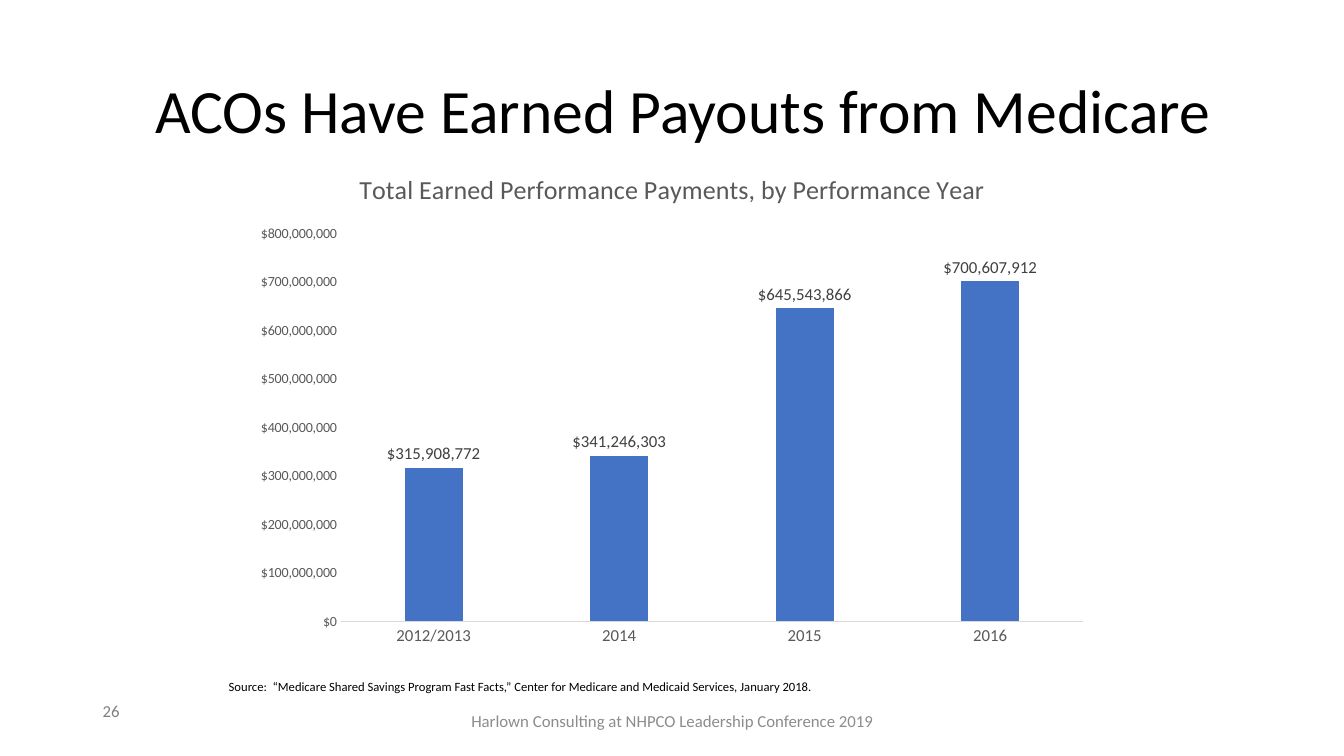
from lxml import etree
from pptx import Presentation
from pptx.chart.data import CategoryChartData
from pptx.dml.color import RGBColor
from pptx.enum.chart import XL_CHART_TYPE, XL_LABEL_POSITION, XL_TICK_MARK
from pptx.enum.text import MSO_ANCHOR, PP_ALIGN
from pptx.oxml import parse_xml
from pptx.oxml.ns import nsdecls
from pptx.util import Inches, Pt

COLORS = {
    "black": "000000", "axis": "595959", "label": "404040", "line": "D9D9D9",
    "bar": "4472C4", "footer": "8C8C8C", "number": "808080",
}
DOLLARS = '"$"#,##0'


def style(font, size, color):
    font.name = "Calibri"
    font.size = Pt(size)
    font.bold = False
    font.color.rgb = RGBColor.from_string(COLORS[color])


def write(sp, text, size, color, align, anchor):
    tf = sp.text_frame
    tf.word_wrap = True
    tf.vertical_anchor = anchor
    p = tf.paragraphs[0]
    p.alignment = align
    r = p.add_run()
    r.text = text
    style(r.font, size, color)
    return p


prs = Presentation()
prs.slide_width, prs.slide_height = Inches(13.33), Inches(7.5)
s = prs.slides.add_slide(prs.slide_layouts[5])

# Title
title = s.shapes.title
title.left, title.top = Inches(1.44), Inches(0.4)
title.width, title.height = Inches(10.98), Inches(1.45)
p = write(title, "ACOs Have Earned Payouts from Medicare", 44, "black",
          PP_ALIGN.LEFT, MSO_ANCHOR.MIDDLE)
p.line_spacing = 0.9

# Payments chart
data = CategoryChartData(number_format=DOLLARS)
data.categories = ["2012/2013", "2014", "2015", "2016"]
data.add_series("Series 1", [315908772, 341246303, 645543866, 700607912])
chart = s.shapes.add_chart(XL_CHART_TYPE.COLUMN_CLUSTERED, Inches(2.42), Inches(1.5),
                           Inches(8.5), Inches(5), data).chart
style(chart.font, 10, "black")
chart.has_legend = False
chart.has_title = True
r = chart.chart_title.text_frame.paragraphs[0].add_run()
r.text = "Total Earned Performance Payments, by Performance Year"
style(r.font, 18.6, "axis")
chart.chart_title.include_in_layout = False

# Columns and value labels
plot = chart.plots[0]
plot.gap_width, plot.overlap = 219, -27
plot.vary_by_categories = False
series = plot.series[0]
series.format.fill.solid()
series.format.fill.fore_color.rgb = RGBColor.from_string(COLORS["bar"])
labels = series.data_labels
labels.show_value = True
labels.number_format, labels.number_format_is_linked = DOLLARS, False
labels.position = XL_LABEL_POSITION.OUTSIDE_END
style(labels.font, 12, "label")

# Axes
cat_axis, val_axis = chart.category_axis, chart.value_axis
for axis, size in ((cat_axis, 12), (val_axis, 10)):
    axis.has_major_gridlines = False
    axis.major_tick_mark = axis.minor_tick_mark = XL_TICK_MARK.NONE
    style(axis.tick_labels.font, size, "axis")
cat_axis.format.line.color.rgb = RGBColor.from_string(COLORS["line"])
cat_axis.format.line.width = Pt(0.75)
val_axis.format.line.fill.background()
val_axis.minimum_scale, val_axis.maximum_scale = 0, 800000000
val_axis.major_unit = 100000000
val_axis.tick_labels.number_format = DOLLARS
val_axis.tick_labels.number_format_is_linked = False

# Fixed inner plot area
plot_area = chart.element.chart.plotArea
for old in plot_area.findall("{*}layout"):
    plot_area.remove(old)
layout = parse_xml(f"<c:layout {nsdecls('c')}><c:manualLayout/></c:layout>")
for tag, val in (("layoutTarget", "inner"), ("xMode", "edge"), ("yMode", "edge"),
                 ("x", "0.113"), ("y", "0.163"), ("w", "0.866"), ("h", "0.77")):
    etree.SubElement(layout[0], f"{{{layout.nsmap['c']}}}{tag}").set("val", val)
plot_area.insert(0, layout)

# Source, footer and page number
notes = [
    ("Source:  “Medicare Shared Savings Program Fast Facts,” Center for Medicare and "
     "Medicaid Services, January 2018.", 9, "black", PP_ALIGN.LEFT, MSO_ANCHOR.TOP,
     (2.17, 6.69, 8.72, 0.25)),
    ("Harlown Consulting at NHPCO Leadership Conference 2019", 12, "footer",
     PP_ALIGN.CENTER, MSO_ANCHOR.MIDDLE, (4.42, 6.95, 4.5, 0.4)),
    ("26", 12, "number", PP_ALIGN.LEFT, MSO_ANCHOR.TOP, (0.92, 6.9, 3, 0.4)),
]
for text, size, color, align, anchor, box in notes:
    sp = s.shapes.add_textbox(*map(Inches, box))
    write(sp, text, size, color, align, anchor)

prs.save("out.pptx")
